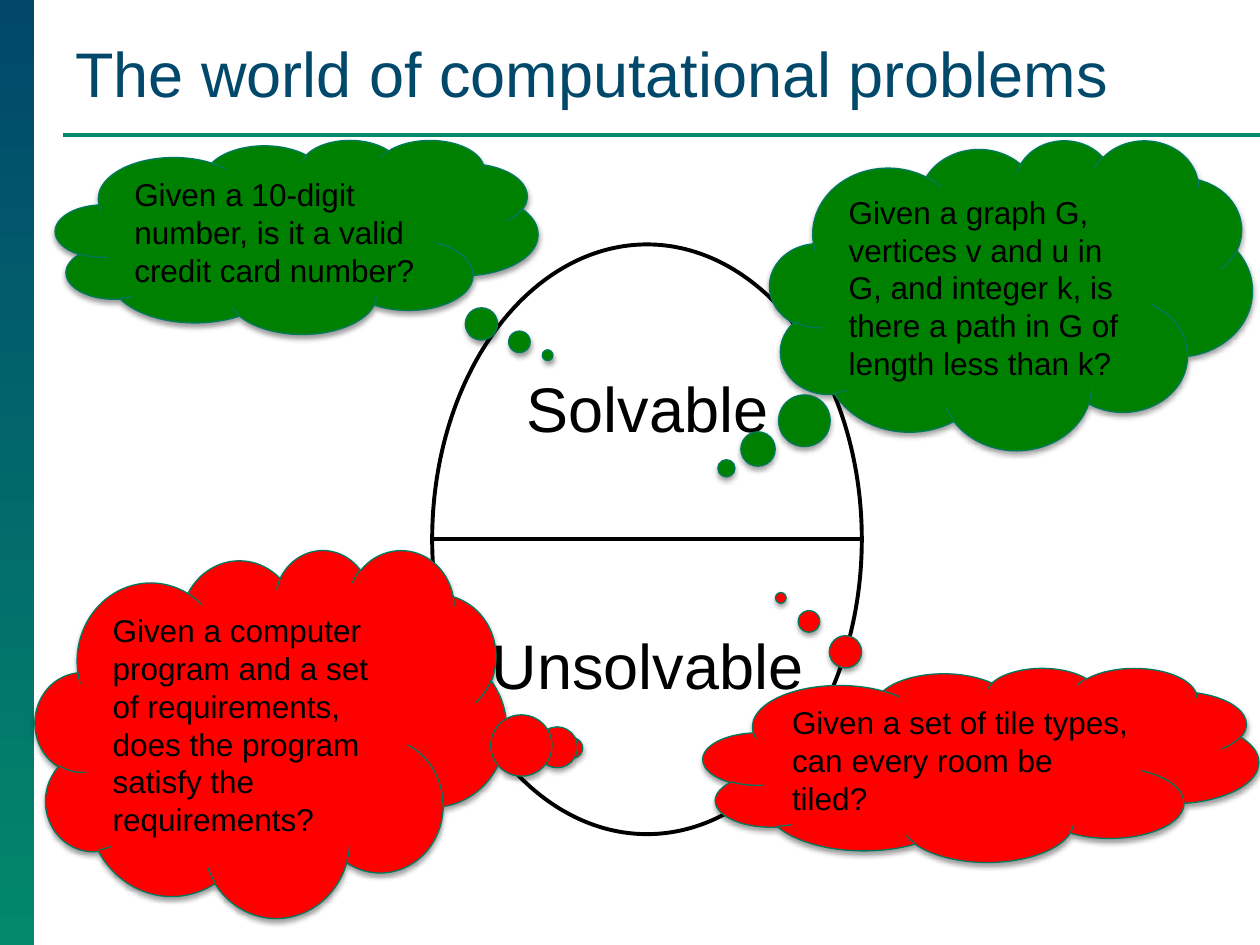
from lxml import etree
from pptx import Presentation
from pptx import util as u
from pptx.dml.color import RGBColor
from pptx.enum import shapes, text
from pptx.oxml.ns import qn

COLUMNS, ROWS = 100, 75
NAVY, TEAL, EDGE = "01486B", "02886B", "007A5F"
GREEN, RED, BLACK = "008000", "FF0000", "000000"


def color(hex_value):
    return RGBColor.from_string(hex_value)


class SlideBuilder:
    """Holds the style and the current slide; lengths are grid columns and rows."""

    font = {"name": "Arial", "bold": False}

    def __init__(self, deck):
        self.cell_w = deck.slide_width / COLUMNS
        self.cell_h = deck.slide_height / ROWS
        self.slide = deck.slides.add_slide(deck.slide_layouts[6])

    def place(self, columns, rows, *size):
        scales = (self.cell_w, self.cell_h) * 2
        return [u.Emu(round(v * s)) for v, s in zip((columns, rows, *size), scales)]

    def set_words(self, frame, words, size, hex_value, align, frame_format):
        for name, value in {"auto_size": text.MSO_AUTO_SIZE.NONE, **frame_format}.items():
            setattr(frame, name, value)
        paragraph = frame.paragraphs[0]
        paragraph.text = words
        paragraph.alignment = align
        for name, value in {**self.font, "size": u.Pt(size)}.items():
            setattr(paragraph.font, name, value)
        paragraph.font.color.rgb = color(hex_value)

    def label(self, box, words, hex_value=BLACK, align=text.PP_ALIGN.CENTER, **frame_format):
        frame = self.slide.shapes.add_textbox(*self.place(*box)).text_frame
        self.set_words(frame, words, 36, hex_value, align, frame_format)

    def shape(self, kind, box, fill=None, line=None, weight=0.75):
        item = self.slide.shapes.add_shape(kind, *self.place(*box))
        item.shadow.inherit = False
        if fill:
            item.fill.solid()
            item.fill.fore_color.rgb = color(fill)
        else:
            item.fill.background()
        if line:
            item.line.color.rgb = color(line)
            item.line.width = u.Pt(weight)
        else:
            item.line.fill.background()
        return item

    def band(self, box, top, bottom):
        fill = self.shape(shapes.MSO_SHAPE.RECTANGLE, box).fill
        fill.gradient()
        fill.gradient_angle = 270
        for stop, hex_value in zip(fill.gradient_stops, (top, bottom)):
            stop.color.rgb = color(hex_value)

    def rule(self, start, end, hex_value):
        line = self.slide.shapes.add_connector(
            shapes.MSO_CONNECTOR.STRAIGHT, *self.place(*start, *end))
        line.line.color.rgb = color(hex_value)
        line.line.width = u.Pt(2.25)
        etree.SubElement(line._element.spPr, qn("a:effectLst"))

    def thought(self, box, tail, fill, words):
        cloud = self.shape(shapes.MSO_SHAPE.CLOUD_CALLOUT, box, fill, EDGE)
        for index, offset in enumerate(tail):
            cloud.adjustments[index] = offset
        # Soft shadow straight below the cloud
        effects = cloud._element.spPr.find(qn("a:effectLst"))
        shadow = etree.SubElement(
            effects, qn("a:outerShdw"), blurRad=str(u.Pt(3.1)), dist=str(u.Pt(1.6)),
            dir="5400000", rotWithShape="0")
        shade = etree.SubElement(shadow, qn("a:srgbClr"), val=BLACK)
        etree.SubElement(shade, qn("a:alpha"), val="38000")
        self.set_words(cloud.text_frame, words, 18, BLACK, text.PP_ALIGN.LEFT,
                       {"word_wrap": True, "vertical_anchor": text.MSO_ANCHOR.TOP})


def main():
    deck = Presentation()
    deck.slide_width, deck.slide_height = u.Inches(10), u.Inches(7.5)
    page = SlideBuilder(deck)

    # Side band, title and its rule
    page.band((0, 0, 2.7, ROWS), NAVY, TEAL)
    page.rule((5, 10.7), (COLUMNS, 10.7), TEAL)
    page.label((5, 2.1, 92.8, 7.1), "The world of computational problems", NAVY,
               text.PP_ALIGN.LEFT, word_wrap=True, vertical_anchor=text.MSO_ANCHOR.BOTTOM)

    # The world, split into two halves
    page.shape(shapes.MSO_SHAPE.OVAL, (34.3, 19.4, 34.1, 46.8), line=BLACK, weight=2.25)
    page.rule((34.3, 42.8), (68.5, 42.8), BLACK)
    page.label((40.7, 28.8, 21.4, 7.1), "Solvable", word_wrap=False)
    page.label((37.9, 49.2, 27, 7.1), "Unsolvable", word_wrap=False)

    # Example problems: box, tail offset, colour, question
    problems = [
        ((61.1, 11.1, 38.3, 24.6), (-0.59, 0.56), GREEN,
         "Given a graph G, vertices v and u in G, and integer k, "
         "is there a path in G of length less than k?"),
        ((55.8, 53, 44.1, 15.4), (-0.36, -0.86), RED,
         "Given a set of tile types, can every room be tiled?"),
        ((4.4, 11.1, 38.3, 15.4), (0.52, 0.61), GREEN,
         "Given a 10-digit number, is it a valid credit card number?"),
        ((2.8, 43.6, 37.4, 29.2), (0.64, 0.04), RED,
         "Given a computer program and a set of requirements, "
         "does the program satisfy the requirements?"),
    ]
    for problem in problems:
        page.thought(*problem)

    deck.save("out.pptx")


if __name__ == "__main__":
    main()
